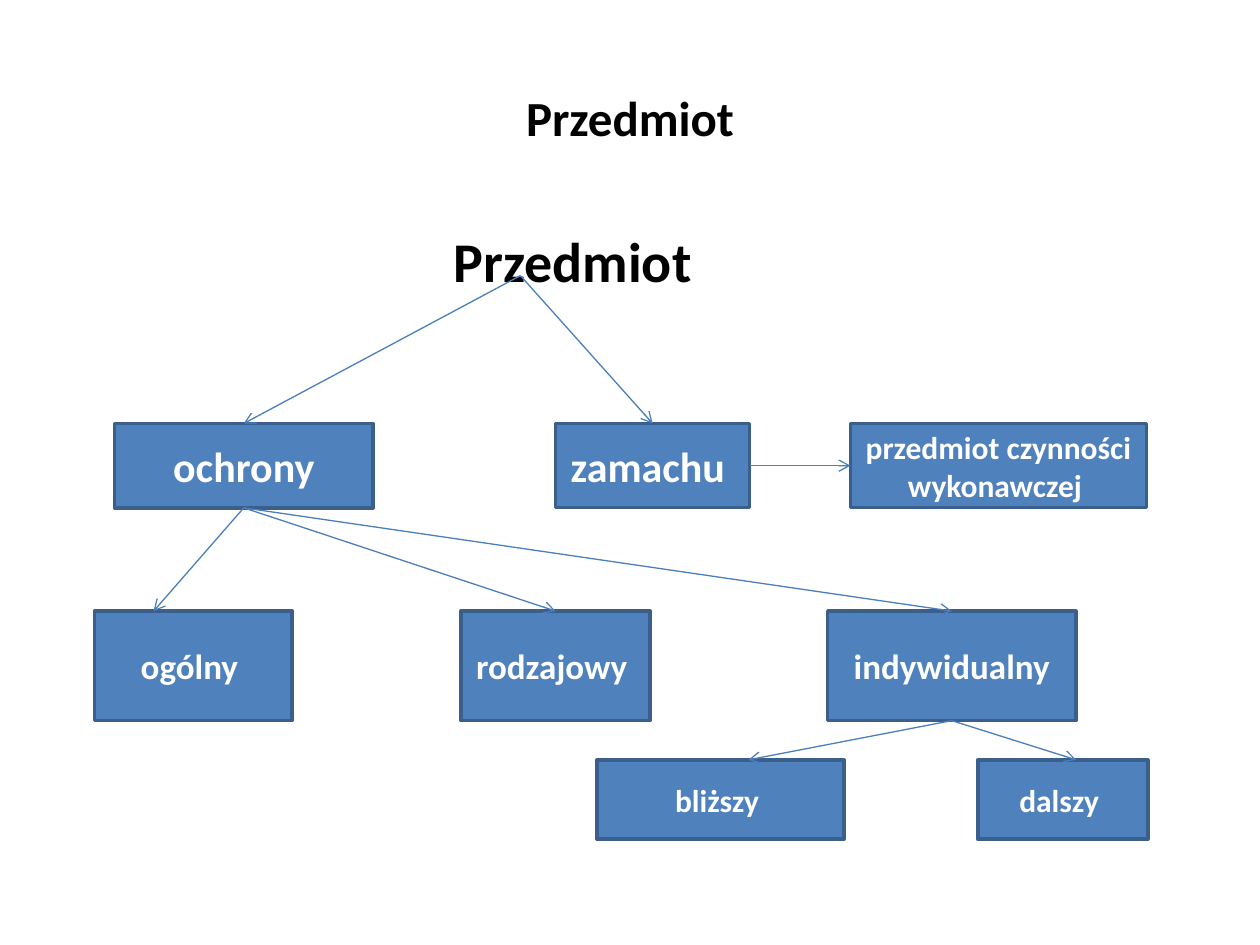
from dataclasses import dataclass

from lxml.etree import SubElement
from pptx import Presentation
from pptx.dml.color import RGBColor
from pptx.enum.shapes import MSO_CONNECTOR, MSO_SHAPE
from pptx.enum.text import MSO_ANCHOR, PP_ALIGN
from pptx.oxml.ns import qn
from pptx.util import Pt


@dataclass(frozen=True)
class Theme:
    font: str = "Calibri"
    ink: RGBColor = RGBColor(0, 0, 0)
    node_ink: RGBColor = RGBColor(255, 255, 255)
    node_fill: RGBColor = RGBColor(0x4F, 0x81, 0xBD)
    node_border: RGBColor = RGBColor(0x3A, 0x5F, 0x8C)
    arrow: RGBColor = RGBColor(0x4B, 0x7E, 0xBC)
    title_size: int = 28
    root_size: int = 32
    branch_size: int = 24
    kind_size: int = 20
    detail_size: int = 18
    border_width: float = 2
    arrow_width: float = 0.75


@dataclass(frozen=True)
class Box:
    left: float
    top: float
    width: float
    height: float


THEME = Theme()
TOP, RIGHT, BOTTOM, LEFT = 0, 3, 2, 1


def write(frame, text, size, color, align):
    frame.word_wrap = True
    frame.text = text
    paragraph = frame.paragraphs[0]
    paragraph.alignment = align
    font = paragraph.font
    font.name, font.size, font.bold = THEME.font, Pt(size), True
    font.color.rgb = color


def place_title(slide, box, text):
    title = slide.shapes.title
    title.left, title.top = Pt(box.left), Pt(box.top)
    title.width, title.height = Pt(box.width), Pt(box.height)
    title.text_frame.vertical_anchor = MSO_ANCHOR.MIDDLE
    write(title.text_frame, text, THEME.title_size, THEME.ink, PP_ALIGN.CENTER)


def place_root(slide, box, text, indent):
    """Write the top term of the tree, indented from the left of the box."""
    root = slide.shapes.add_textbox(
        Pt(box.left), Pt(box.top), Pt(box.width), Pt(box.height))
    root.text_frame.margin_left = Pt(indent)
    write(root.text_frame, text, THEME.root_size, THEME.ink, PP_ALIGN.LEFT)


def place_level(slide, box, nodes):
    """Place one level of the tree; each node is offset, width, text, size, preset."""
    level = []
    for offset, width, text, size, preset in nodes:
        node = slide.shapes.add_shape(
            preset, Pt(box.left + offset), Pt(box.top), Pt(width), Pt(box.height))
        node.shadow.inherit = False
        node.fill.solid()
        node.fill.fore_color.rgb = THEME.node_fill
        node.line.color.rgb = THEME.node_border
        node.line.width = Pt(THEME.border_width)
        node.text_frame.vertical_anchor = MSO_ANCHOR.MIDDLE
        write(node.text_frame, text, size, THEME.node_ink, PP_ALIGN.CENTER)
        level.append(node)
    return level


def add_arrow(slide, start, end):
    """Draw an arrow; each end is (node, side) or a pair of lengths in points."""
    arrow = slide.shapes.add_connector(MSO_CONNECTOR.STRAIGHT, 0, 0, 0, 0)
    if isinstance(start[0], (int, float)):
        arrow.begin_x, arrow.begin_y = Pt(start[0]), Pt(start[1])
    else:
        arrow.begin_connect(*start)
    if isinstance(end[0], (int, float)):
        arrow.end_x, arrow.end_y = Pt(end[0]), Pt(end[1])
    else:
        arrow.end_connect(*end)
    arrow.line.color.rgb = THEME.arrow
    arrow.line.width = Pt(THEME.arrow_width)
    SubElement(arrow.line._get_or_add_ln(), qn("a:tailEnd"), type="arrow")
    SubElement(arrow._element.spPr, qn("a:effectLst"))


def place_tree(slide, box):
    rect, process = MSO_SHAPE.RECTANGLE, MSO_SHAPE.FLOWCHART_PROCESS
    place_root(slide, box, "Przedmiot", indent=223.2)

    branch_top, kind_top, detail_top = (box.top + drop for drop in (116, 223.2, 308.2))
    protection, attack, action = place_level(
        slide, Box(box.left, branch_top, box.width, 48.2), [
            (29.5, 147.6, "ochrony", THEME.branch_size, process),
            (281.5, 110.9, "zamachu ", THEME.branch_size, rect),
            (450, 169.2, "przedmiot czynności wykonawczej ", THEME.detail_size, rect),
        ])
    general, generic, individual = place_level(
        slide, Box(box.left, kind_top, box.width, 62.6), [
            (18, 113, "ogólny ", THEME.kind_size, rect),
            (227.5, 108, "rodzajowy ", THEME.kind_size, rect),
            (437, 141.8, "indywidualny", THEME.kind_size, rect),
        ])
    place_level(
        slide, Box(box.left, detail_top, box.width, 45.4), [
            (305.3, 141.1, "bliższy ", THEME.detail_size, rect),
            (522.7, 97.2, "dalszy ", THEME.detail_size, rect),
        ])

    root_tip = (box.left + 261.4, box.top + 31.5)
    for branch in (protection, attack):
        add_arrow(slide, root_tip, (branch, TOP))
    add_arrow(slide, (attack, RIGHT), (action, LEFT))
    add_arrow(slide, (protection, BOTTOM), (box.left + 51.8, kind_top))
    for kind in (generic, individual):
        add_arrow(slide, (protection, BOTTOM), (kind, TOP))
    for detail_x in (391.7, 578.9):
        add_arrow(slide, (individual, BOTTOM), (box.left + detail_x, detail_top))


def main():
    deck = Presentation()
    deck.slide_width, deck.slide_height = Pt(720), Pt(540)
    slide = deck.slides.add_slide(deck.slide_layouts[5])
    place_title(slide, Box(36, 21.6, 648, 90), "Przedmiot")
    place_tree(slide, Box(36, 126, 648, 356.4))
    deck.save("out.pptx")


if __name__ == "__main__":
    main()
